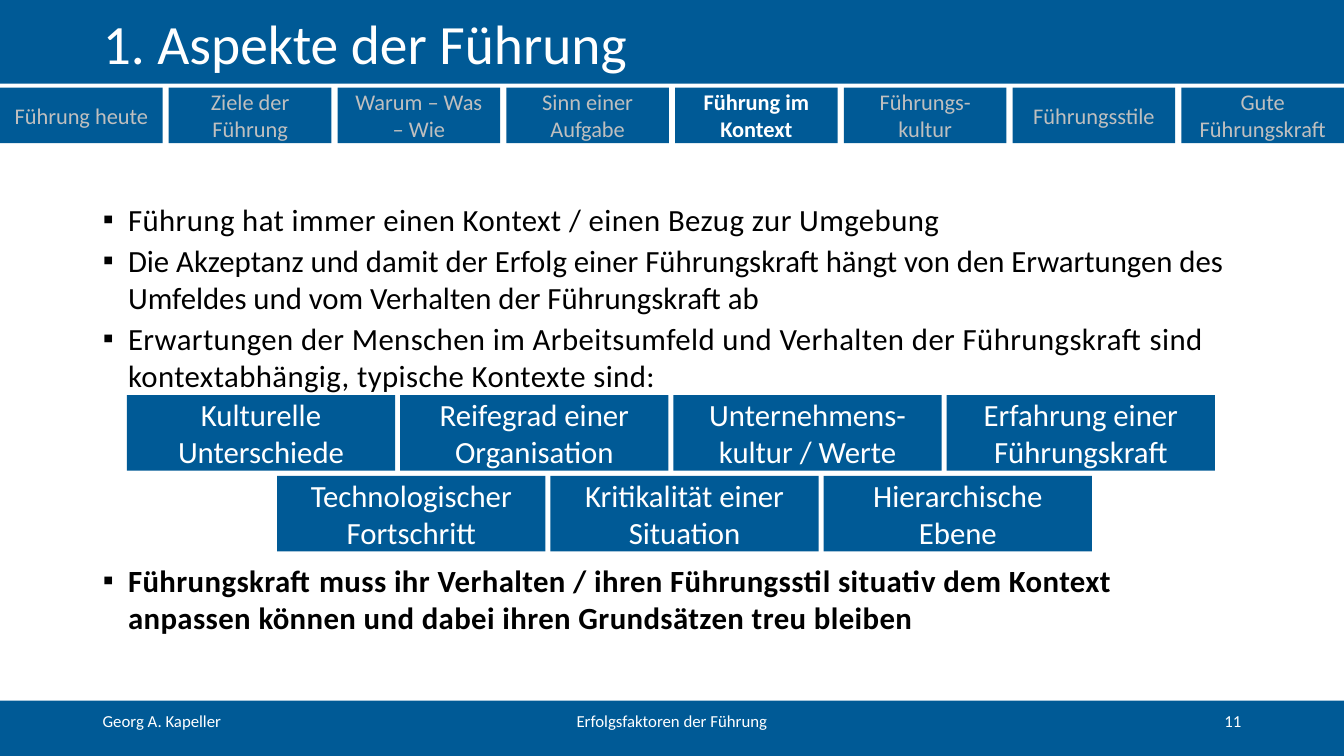
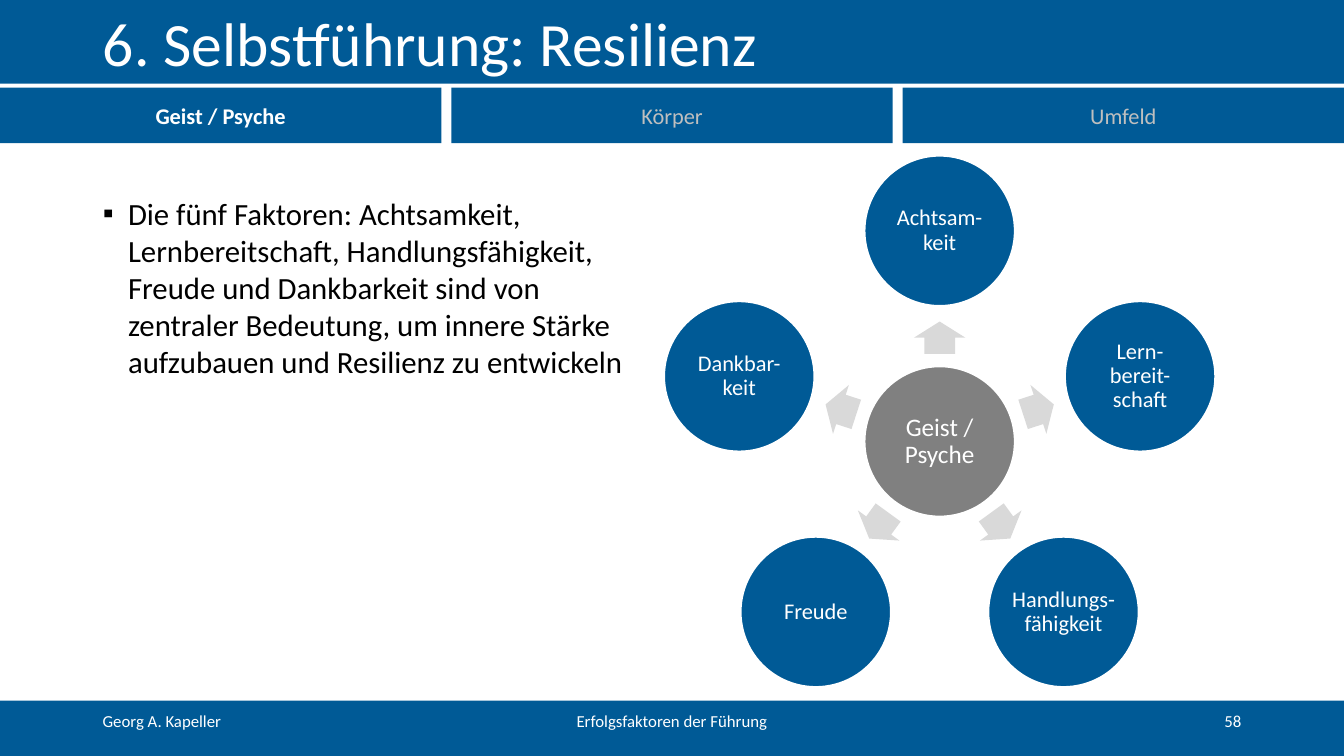
"""Build two leadership slides with shared bands, navigation tabs and footers."""
from math import cos, radians, sin

from lxml.etree import SubElement
from pptx import Presentation
from pptx.dml.color import RGBColor
from pptx.enum.shapes import MSO_SHAPE
from pptx.enum.text import MSO_ANCHOR, MSO_AUTO_SIZE, PP_ALIGN
from pptx.oxml.ns import qn
from pptx.util import Inches, Pt

BLUE, WHITE, BLACK = "005A96", "FFFFFF", "000000"
MUTED, HUB_GRAY, ARROW_GRAY = "BFBFBF", "808080", "D9D9D9"
FONT = "Calibri"
WIDTH, HEIGHT = 13.33, 7.5
MARGIN = 0.92
CONTENT_WIDTH = WIDTH - 2 * MARGIN
TITLE_HEIGHT, TAB_TOP, BAND_HEIGHT = 0.83, 0.87, 0.55
FOOTER_TOP = HEIGHT - BAND_HEIGHT


def add_box(slide, kind, left, top, width, height, fill):
    """Add a filled preset shape without outline or shadow."""
    shape = slide.shapes.add_shape(
        kind, Inches(left), Inches(top), Inches(width), Inches(height))
    shape.shadow.inherit = False
    shape.fill.solid()
    shape.fill.fore_color.rgb = RGBColor.from_string(fill)
    shape.line.fill.background()
    shape.text_frame.vertical_anchor = MSO_ANCHOR.MIDDLE
    return shape


def write(paragraph, text, size, color, align=PP_ALIGN.CENTER, bold=False, tracking=0):
    """Write text into a paragraph, one run for each line."""
    paragraph.alignment = align
    for index, line in enumerate(text.split("\n")):
        if index:
            paragraph.add_line_break()
        run = paragraph.add_run()
        run.text = line
        run.font.name = FONT
        run.font.size = Pt(size)
        run.font.bold = bold
        run.font.color.rgb = RGBColor.from_string(color)
        if tracking:
            run._r.get_or_add_rPr().set("spc", str(tracking))


pages = [
    {
        "title": "1. Aspekte der Führung", "title_size": 39.6, "number": "11",
        "tabs": ["Führung heute", "Ziele der Führung", "Warum – Was – Wie",
                 "Sinn einer Aufgabe", "Führung im Kontext", "Führungs-kultur",
                 "Führungsstile", "Gute Führungskraft"],
        "active": "Führung im Kontext", "tab_gap": 0.06,
        "body_top": 1.94, "body_height": 5.01,
        "bullets": [
            ("Führung hat immer einen Kontext / einen Bezug zur Umgebung", 3, False, 30),
            ("Die Akzeptanz und damit der Erfolg einer Führungskraft hängt von den "
             "Erwartungen des Umfeldes und vom Verhalten der Führungskraft ab", 3, False, 0),
            ("Erwartungen der Menschen im Arbeitsumfeld und Verhalten der Führungskraft "
             "sind kontextabhängig, typische Kontexte sind:", 3, False, 30),
            ("Führungskraft muss ihr Verhalten / ihren Führungsstil situativ dem Kontext "
             "anpassen können und dabei ihren Grundsätzen treu bleiben", 120, True, 30),
        ],
    },
    {
        "title": "6. Selbstführung: Resilienz", "title_size": 44, "number": "58",
        "tabs": ["Geist / Psyche", "Körper", "Umfeld"],
        "active": "Geist / Psyche", "tab_gap": 0.1,
        "body_top": 1.88, "body_height": 4.78,
        "bullets": [
            ("Die fünf Faktoren: Achtsamkeit,\nLernbereitschaft, Handlungsfähigkeit,\n"
             "Freude und Dankbarkeit sind von\nzentraler Bedeutung, um innere Stärke\n"
             "aufzubauen und Resilienz zu entwickeln", 3, False, 0),
        ],
    },
]

presentation = Presentation()
presentation.slide_width, presentation.slide_height = Inches(WIDTH), Inches(HEIGHT)

for page in pages:
    slide = presentation.slides.add_slide(presentation.slide_layouts[1])
    title, body = slide.placeholders

    title_band = add_box(slide, MSO_SHAPE.RECTANGLE, 0, 0, WIDTH, TITLE_HEIGHT, BLUE)
    title._element.addprevious(title_band._element)
    add_box(slide, MSO_SHAPE.RECTANGLE, 0, FOOTER_TOP, WIDTH, BAND_HEIGHT, BLUE)

    for placeholder, top, height, anchor in [
        (title, 0, TITLE_HEIGHT, MSO_ANCHOR.MIDDLE),
        (body, page["body_top"], page["body_height"], MSO_ANCHOR.TOP),
    ]:
        placeholder.left, placeholder.top = Inches(MARGIN), Inches(top)
        placeholder.width, placeholder.height = Inches(CONTENT_WIDTH), Inches(height)
        placeholder.text_frame.auto_size = MSO_AUTO_SIZE.NONE
        placeholder.text_frame.vertical_anchor = anchor
    write(title.text_frame.paragraphs[0], page["title"], page["title_size"], WHITE,
          PP_ALIGN.LEFT)

    for index, (text, space_before, bold, tracking) in enumerate(page["bullets"]):
        frame = body.text_frame
        paragraph = frame.add_paragraph() if index else frame.paragraphs[0]
        write(paragraph, text, 22, BLACK, PP_ALIGN.LEFT, bold, tracking)
        paragraph.space_before = Pt(space_before)
        properties = paragraph._p.get_or_add_pPr()
        properties.set("marL", str(Inches(0.25)))
        properties.set("indent", str(-Inches(0.25)))
        SubElement(properties, qn("a:buChar")).set("char", "▪")

    for text, left, width, align in [
        ("Georg A. Kapeller", MARGIN, 3, PP_ALIGN.LEFT),
        ("Erfolgsfaktoren der Führung", (WIDTH - 4.5) / 2, 4.5, PP_ALIGN.CENTER),
        (page["number"], WIDTH - MARGIN - 3, 3, PP_ALIGN.RIGHT),
    ]:
        footer = slide.shapes.add_textbox(
            Inches(left), Inches(FOOTER_TOP), Inches(width), Inches(0.4))
        footer.text_frame.word_wrap = True
        footer.text_frame.vertical_anchor = MSO_ANCHOR.MIDDLE
        write(footer.text_frame.paragraphs[0], text, 12, WHITE, align)

    gap, count = page["tab_gap"], len(page["tabs"])
    tab_width = (WIDTH - gap * (count - 1)) / count
    for column, text in enumerate(page["tabs"]):
        active = text == page["active"]
        tab = add_box(slide, MSO_SHAPE.RECTANGLE, column * (tab_width + gap), TAB_TOP,
                      tab_width, BAND_HEIGHT, BLUE)
        write(tab.text_frame.paragraphs[0], text, 16, WHITE if active else MUTED, bold=active)

context_slide, resilience_slide = presentation.slides

context_rows = [
    (1.26, ["Kulturelle Unterschiede", "Reifegrad einer Organisation",
            "Unternehmens-kultur / Werte", "Erfahrung einer Führungskraft"]),
    (2.75, ["Technologischer Fortschritt", "Kritikalität einer Situation",
            "Hierarchische Ebene"]),
]
context_width, context_height, context_gap = 2.66, 0.75, 0.05
for row, (row_left, contexts) in enumerate(context_rows):
    for column, text in enumerate(contexts):
        context = add_box(context_slide, MSO_SHAPE.RECTANGLE,
                          row_left + column * (context_width + context_gap),
                          3.92 + row * (context_height + context_gap),
                          context_width, context_height, BLUE)
        write(context.text_frame.paragraphs[0], text, 22, WHITE)

hub_x, hub_y, diameter = 9.32, 4.38, 1.5
factor_radius, arrow_radius = 2.09, 1.03
arrow_length, arrow_width = 0.32, 0.51
factors = ["Achtsam-keit", "Lern-bereit-schaft", "Handlungs-fähigkeit", "Freude",
           "Dankbar-keit"]
circles = [("Geist / Psyche", hub_x, hub_y, 18, HUB_GRAY)]
for index, text in enumerate(factors):
    angle = index * 360 / len(factors) - 90
    across, down = cos(radians(angle)), sin(radians(angle))
    circles.append((text, hub_x + factor_radius * across, hub_y + factor_radius * down,
                    16, BLUE))
    arrow = add_box(resilience_slide, MSO_SHAPE.RIGHT_ARROW,
                    hub_x + arrow_radius * across - arrow_length / 2,
                    hub_y + arrow_radius * down - arrow_width / 2,
                    arrow_length, arrow_width, ARROW_GRAY)
    arrow.adjustments[0], arrow.adjustments[1] = 0.6, 0.5
    arrow.rotation = angle % 360

for text, center_x, center_y, size, fill in circles:
    circle = add_box(resilience_slide, MSO_SHAPE.OVAL, center_x - diameter / 2,
                     center_y - diameter / 2, diameter, diameter, fill)
    circle.line.color.rgb = RGBColor.from_string(WHITE)
    circle.line.width = Pt(2)
    frame = circle.text_frame
    frame.margin_left = frame.margin_right = Inches(0.02)
    frame.margin_top = frame.margin_bottom = Inches(0.02)
    frame.paragraphs[0].line_spacing = 0.9
    write(frame.paragraphs[0], text, size, WHITE)

presentation.save("out.pptx")
